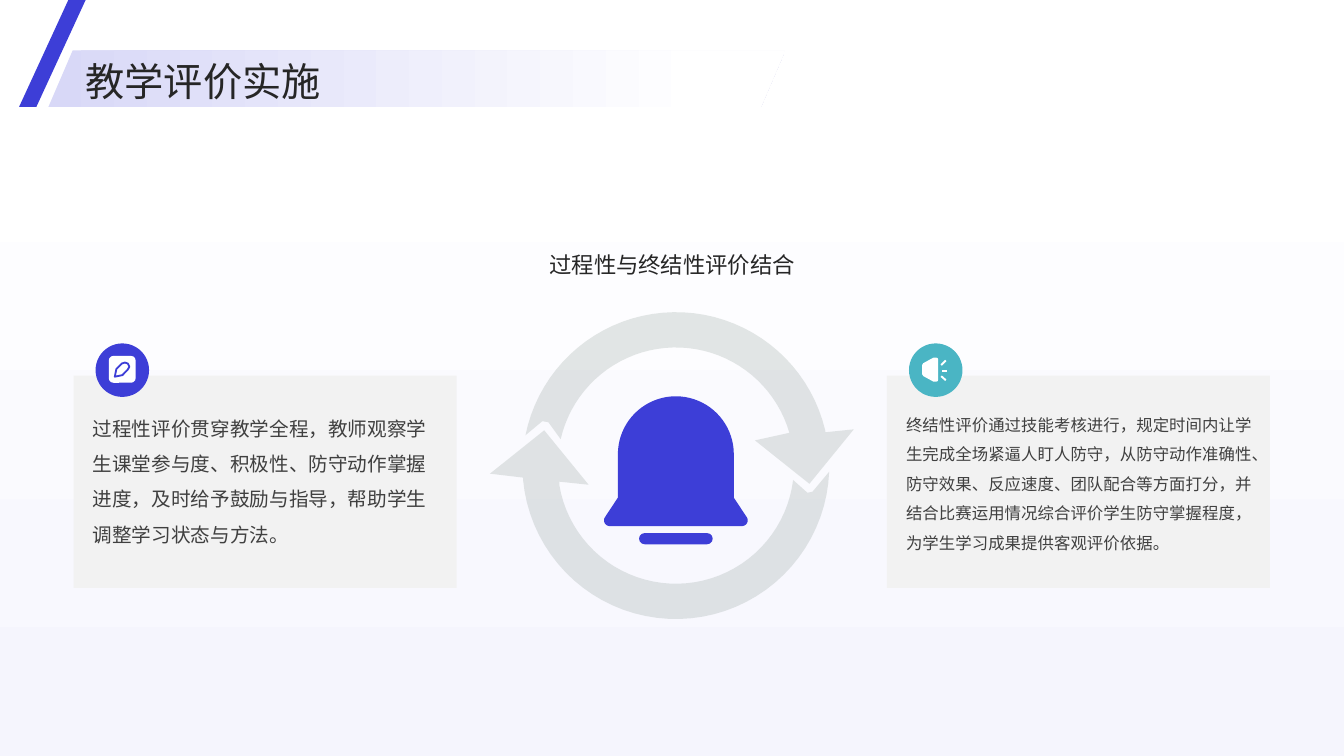
from math import cos, radians, sin

from lxml.etree import SubElement
from pptx import Presentation
from pptx.dml.color import RGBColor
from pptx.enum.shapes import MSO_CONNECTOR, MSO_SHAPE
from pptx.enum.text import MSO_ANCHOR, MSO_AUTO_SIZE, PP_ALIGN
from pptx.oxml.ns import qn
from pptx.util import Pt

FONT = "Noto Sans CJK SC"
HUES = {
    "blue": "3D3ED7", "teal": "4AB5C4", "ring": "455F51", "card": "F2F2F2",
    "tint": "D8D8F7", "mist": "F5F5FD", "white": "FFFFFF",
    "dark": "262626", "body": "404040",
}


def hue(name):
    return RGBColor.from_string(HUES[name])


def box(x, y, w, h):
    return Pt(x), Pt(y), Pt(w), Pt(h)


def paint(shape, fill):
    shape.shadow.inherit = False
    shape.fill.solid()
    shape.fill.fore_color.rgb = hue(fill)
    shape.line.fill.background()
    return shape


def block(shapes, kind, area, fill, round=None):
    shape = paint(shapes.add_shape(kind, *box(*area)), fill)
    if round is not None:
        shape.adjustments[0] = round
    return shape


def fade(shape, start, end, angle):
    shape.fill.gradient()
    shape.fill.gradient_angle = angle
    stops = shape.fill.gradient_stops
    for stop, (name, place) in zip(stops, (start, end)):
        stop.color.rgb = hue(name)
        stop.position = place


def trace(shapes, x, y, points, fill):
    dots = [(Pt(x + a), Pt(y + b)) for a, b in points]
    path = shapes.build_freeform(*dots[0])
    path.add_line_segments(dots[1:], close=True)
    return paint(path.convert_to_shape(), fill)


def arc(x, y, r, start, end, steps=40):
    turns = [radians(start + (end - start) * i / steps) for i in range(steps + 1)]
    return [(x + r * cos(t), y + r * sin(t)) for t in turns]


def write(shape, text, size, color, space, align=PP_ALIGN.LEFT,
          anchor=MSO_ANCHOR.TOP, inset=(7.2, 3.6)):
    frame = shape.text_frame
    frame.word_wrap = True
    frame.auto_size = MSO_AUTO_SIZE.NONE
    frame.vertical_anchor = anchor
    frame.margin_left = frame.margin_right = Pt(inset[0])
    frame.margin_top = frame.margin_bottom = Pt(inset[1])
    line = frame.paragraphs[0]
    line.alignment = align
    line.line_spacing = space
    run = line.add_run()
    run.text = text
    run.font.name = FONT
    run.font.size = Pt(size)
    run.font.color.rgb = hue(color)
    SubElement(run.font._element, qn("a:ea")).set("typeface", FONT)


def draw_back(slide, w, h):
    back = block(slide.shapes, MSO_SHAPE.RECTANGLE, (0, 0, w, h), "white")
    fade(back, ("mist", 0), ("white", 0.85), 90)


def draw_head(slide, x, y, w, h):
    shapes = slide.shapes
    band = block(shapes, MSO_SHAPE.PARALLELOGRAM, (x + 20.9, y + 36, 526.3, h - 36), "tint", 0.43)
    fade(band, ("tint", 0), ("white", 0.89), 0)
    title = shapes.title
    title.left, title.top, title.width, title.height = box(x + 47.5, y + 37.4, w - 47.5, 36.7)
    write(title, "教学评价实施", 28, "dark", 1.1, anchor=MSO_ANCHOR.MIDDLE, inset=(0, 0))
    title.element.getparent().append(title.element)
    block(shapes, MSO_SHAPE.PARALLELOGRAM, (x, y, 47.5, h), "blue", 0.74)


def draw_bell(shapes, x, y):
    dome = arc(0, 0, 41.4, 180, 360)
    right = arc(47.2, 47.2, 4.1, -30, 90)
    left = [(-a, b) for a, b in reversed(right)]
    trace(shapes, x, y, dome + [(41.4, 31)] + right + left + [(-41.4, 31)], "blue")
    block(shapes, MSO_SHAPE.ROUNDED_RECTANGLE, (x - 26.3, y + 56.3, 52.6, 8), "blue", 0.5)


def draw_ring(shapes, x, y):
    inner, outer = 84.4, 109.6
    upper = (
        arc(0, 0, inner, 192.9, 343.9)
        + [(56.5, -18), (95.4, 13), (127.1, -25.9), (106.9, -23.8)]
        + arc(0, 0, outer, 346.6, 191.4)
        + [(-95.4, -31.7), (-91.1, -31)]
    )
    lower = (
        arc(0, 0, inner, 7, 170.6)
        + [(-83.2, 11.5), (-62.3, 13.7), (-94, -25.2), (-132.8, 5.8), (-109.1, 8.6)]
        + arc(0, 0, outer, 174.7, 2.3)
        + [(97.6, 18.7), (94, 19.4)]
    )
    for points in (lower, upper):
        part = trace(shapes, x, y, points, "ring")
        tone = part.fill._xPr.find(qn("a:solidFill"))[0]
        SubElement(tone, qn("a:alpha")).set("val", "15000")


def draw_hub(slide, x, y):
    group = slide.shapes.add_group_shape()
    draw_bell(group.shapes, x, y - 8.1)
    draw_ring(group.shapes, x, y)


def draw_pen(shapes, x, y):
    block(shapes, MSO_SHAPE.ROUNDED_RECTANGLE, (x + 9.4, y + 8.9, 19.2, 19.2), "white", 0.17)
    leaf = [(13.7, 23.8), (14.8, 18.4), (18.7, 14.4), (20.9, 13.7),
            (23, 14.4), (24.1, 16.6), (23, 18.7), (19.1, 22.7)]
    nib = trace(shapes, x, y, leaf, "white")
    nib.line.color.rgb = hue("blue")
    nib.line.width = Pt(1.3)


def draw_horn(shapes, x, y):
    cone = [(10.9, 15.5), (18, 11.6), (19.4, 11.6), (19.4, 25.9), (18, 25.9), (10.9, 22)]
    horn = trace(shapes, x, y, cone, "white")
    horn.line.color.rgb = hue("white")
    horn.line.width = Pt(3)
    for a, b, c, d in ((23, 15.5, 26.3, 12.2), (23.4, 19.4, 27.4, 19.4), (23, 23.4, 26.3, 26.3)):
        ray = shapes.add_connector(MSO_CONNECTOR.STRAIGHT, Pt(x + a), Pt(y + b), Pt(x + c), Pt(y + d))
        ray.line.color.rgb = hue("white")
        ray.line.width = Pt(1.4)
        SubElement(ray._element.spPr, qn("a:effectLst"))


def draw_card(slide, x, y, w, h, text, size, color, icon):
    shapes = slide.shapes
    block(shapes, MSO_SHAPE.RECTANGLE, (x, y, w, h), "card")
    note = shapes.add_textbox(*box(x + 6.5, y + 17.3, w - 7.9, h - 32.4))
    write(note, text, size, "body", 1.5)
    spot = x + 15.7, y - 23.1
    block(shapes, MSO_SHAPE.OVAL, (*spot, 38.2, 38.2), color)
    icon(shapes, *spot)


def draw_lead(slide, x, y, w, h):
    lead = slide.shapes.add_textbox(*box(x, y, w, h))
    write(lead, "过程性与终结性评价结合", 16, "dark", 1.5, PP_ALIGN.CENTER, MSO_ANCHOR.BOTTOM, (0, 0))


def main():
    deck = Presentation()
    deck.slide_width, deck.slide_height = Pt(960), Pt(540)
    slide = deck.slides.add_slide(deck.slide_layouts[5])
    draw_back(slide, 960, 540)
    draw_hub(slide, 482.8, 332.6)
    cards = (
        (633.6, "终结性评价通过技能考核进行，规定时间内让学生完成全场紧逼人盯人防守，从防守动作准确性、防守效果、反应速度、团队配合等方面打分，并结合比赛运用情况综合评价学生防守掌握程度，为学生学习成果提供客观评价依据。",
         11.7, "teal", draw_horn),
        (52.6, "过程性评价贯穿教学全程，教师观察学生课堂参与度、积极性、防守动作掌握进度，及时给予鼓励与指导，帮助学生调整学习状态与方法。",
         14, "blue", draw_pen),
    )
    for x, *rest in cards:
        draw_card(slide, x, 268.4, 273.6, 151.6, *rest)
    draw_lead(slide, 72.7, 103.7, 815, 95)
    draw_head(slide, 13.7, 0, 893.5, 76.3)
    deck.save("out.pptx")


if __name__ == "__main__":
    main()
